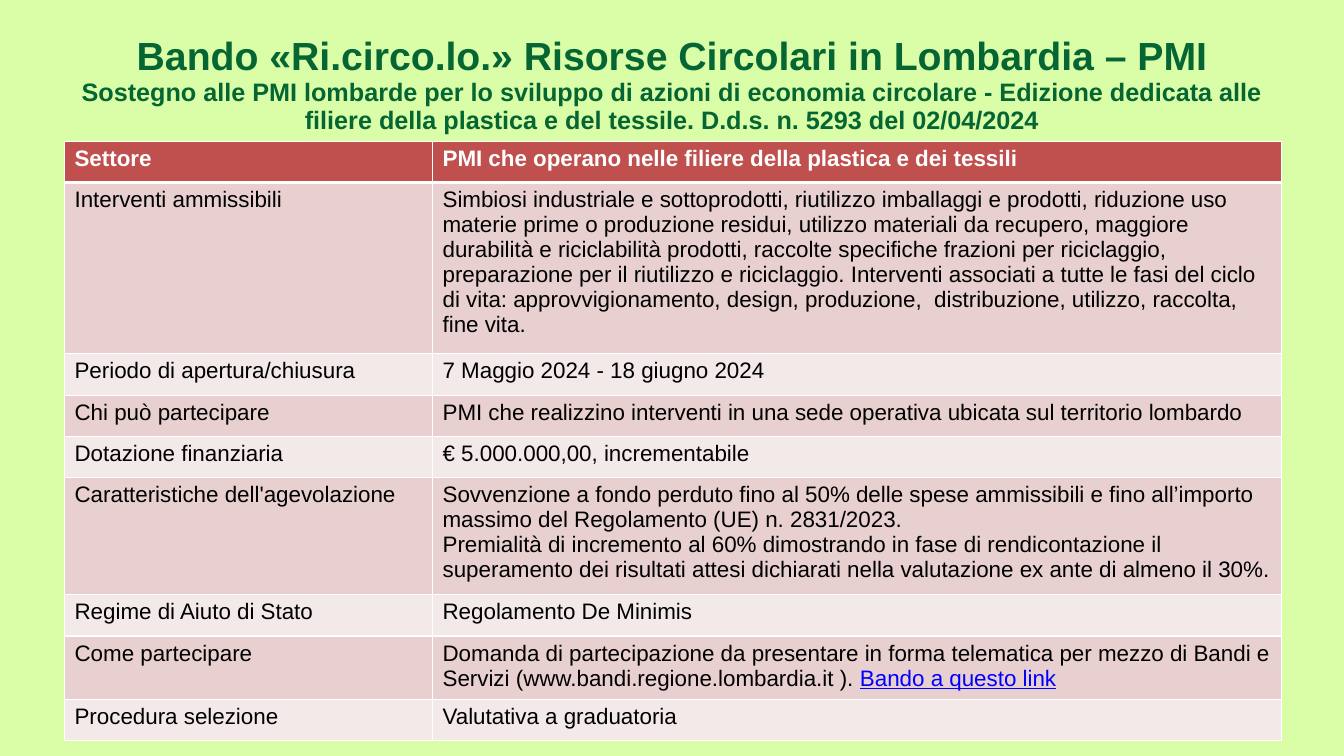
from lxml import etree
from pptx import Presentation
from pptx.dml.color import RGBColor
from pptx.enum.text import MSO_ANCHOR, PP_ALIGN
from pptx.oxml.ns import qn
from pptx.util import Inches, Pt

CENTER = PP_ALIGN.CENTER
MIDDLE = MSO_ANCHOR.MIDDLE
FONT = "Arial"
LIME = RGBColor(0xDA, 0xFD, 0xA7)
GREEN = RGBColor(0x05, 0x66, 0x33)
RED = RGBColor(0xC0, 0x50, 0x4D)
ROSE = RGBColor(0xE8, 0xD0, 0xD0)
PALE_ROSE = RGBColor(0xF4, 0xE9, 0xE9)
WHITE = RGBColor(0xFF, 0xFF, 0xFF)
BLACK = RGBColor(0, 0, 0)
BLUE = RGBColor(0, 0, 0xFF)

TITLE = "Bando «Ri.circo.lo.» Risorse Circolari in Lombardia – PMI"
SUBTITLE = (
    "Sostegno alle PMI lombarde per lo sviluppo di azioni di economia circolare - "
    "Edizione dedicata alle filiere della plastica e del tessile. "
    "D.d.s. n. 5293 del 02/04/2024"
)
LINK = "Bando a questo link"
COLUMN_WIDTHS = (3.65, 8.42)

# Row height in inches, label, description
ROWS = [
    (0.41, "Settore", "PMI che operano nelle filiere della plastica e dei tessili"),
    (1.7, "Interventi ammissibili",
     "Simbiosi industriale e sottoprodotti, riutilizzo imballaggi e prodotti, "
     "riduzione uso materie prime o produzione residui, utilizzo materiali da "
     "recupero, maggiore durabilità e riciclabilità prodotti, raccolte specifiche "
     "frazioni per riciclaggio, preparazione per il riutilizzo e riciclaggio. "
     "Interventi associati a tutte le fasi del ciclo di vita: approvvigionamento, "
     "design, produzione,  distribuzione, utilizzo, raccolta, fine vita."),
    (0.41, "Periodo di apertura/chiusura", "7 Maggio 2024 - 18 giugno 2024"),
    (0.41, "Chi può partecipare",
     "PMI che realizzino interventi in una sede operativa ubicata sul territorio "
     "lombardo"),
    (0.41, "Dotazione finanziaria", "€ 5.000.000,00, incrementabile"),
    (1.16, "Caratteristiche dell'agevolazione",
     "Sovvenzione a fondo perduto fino al 50% delle spese ammissibili e fino "
     "all’importo massimo del Regolamento (UE) n. 2831/2023.\n"
     "Premialità di incremento al 60% dimostrando in fase di rendicontazione il "
     "superamento dei risultati attesi dichiarati nella valutazione ex ante di "
     "almeno il 30%."),
    (0.41, "Regime di Aiuto di Stato", "Regolamento De Minimis"),
    (0.63, "Come partecipare",
     "Domanda di partecipazione da presentare in forma telematica per mezzo di "
     "Bandi e Servizi (www.bandi.regione.lombardia.it ). "),
    (0.41, "Procedura selezione", "Valutativa a graduatoria"),
]


def style_span(span, size, color, bold=False):
    span.font.name = FONT
    span.font.size = Pt(size)
    span.font.bold = bold
    span.font.color.rgb = color


def add_heading(slide, left, top, width, height):
    box = slide.shapes.add_textbox(Inches(left), Inches(top), Inches(width), Inches(height))
    frame = box.text_frame
    frame.word_wrap = True
    frame.vertical_anchor = MIDDLE
    frame.text = f"{TITLE}\n{SUBTITLE}"
    for para, size in zip(frame.paragraphs, (28, 18)):
        para.alignment = CENTER
        style_span(para.runs[0], size, GREEN, bold=True)
    frame.paragraphs[1].line_spacing = Pt(20)


def set_borders(cell, bottom_width):
    """Draw white cell borders; they must precede the fill in the XML."""
    properties = cell._tc.get_or_add_tcPr()
    for side, width in (("L", 1), ("R", 1), ("T", 1), ("B", bottom_width)):
        line = etree.SubElement(properties, qn(f"a:ln{side}"), w=str(Pt(width)))
        fill = etree.SubElement(line, qn("a:solidFill"))
        etree.SubElement(fill, qn("a:srgbClr"), val=str(WHITE))


def fill_cell(cell, text, is_header, color):
    set_borders(cell, 3 if is_header else 1)
    cell.fill.solid()
    cell.fill.fore_color.rgb = color
    cell.text_frame.text = text
    for para in cell.text_frame.paragraphs:
        for span in para.runs:
            style_span(span, 16, WHITE if is_header else BLACK, bold=is_header)


def add_call_table(slide, left, top, width):
    height = sum(row[0] for row in ROWS)
    frame = slide.shapes.add_table(
        len(ROWS), len(COLUMN_WIDTHS),
        Inches(left), Inches(top), Inches(width), Inches(height))
    table = frame.table
    for column, column_width in zip(table.columns, COLUMN_WIDTHS):
        column.width = Inches(column_width)
    for index, (row_height, *texts) in enumerate(ROWS):
        table.rows[index].height = Inches(row_height)
        is_header = index == 0
        color = RED if is_header else ROSE if index % 2 else PALE_ROSE
        for cell, text in zip(table.rows[index].cells, texts):
            fill_cell(cell, text, is_header, color)

    how_to_apply = table.cell(len(ROWS) - 2, 1)
    link = how_to_apply.text_frame.paragraphs[0].add_run()
    link.text = LINK
    style_span(link, 16, BLUE)
    link.font.underline = True


def main():
    deck = Presentation()
    deck.slide_width = Inches(13.33)
    deck.slide_height = Inches(7.5)
    slide = deck.slides.add_slide(deck.slide_layouts[6])
    slide.background.fill.solid()
    slide.background.fill.fore_color.rgb = LIME
    add_call_table(slide, 0.64, 1.4, sum(COLUMN_WIDTHS))
    add_heading(slide, 0.45, 0.25, 12.43, 1.15)
    deck.save("out.pptx")


if __name__ == "__main__":
    main()
